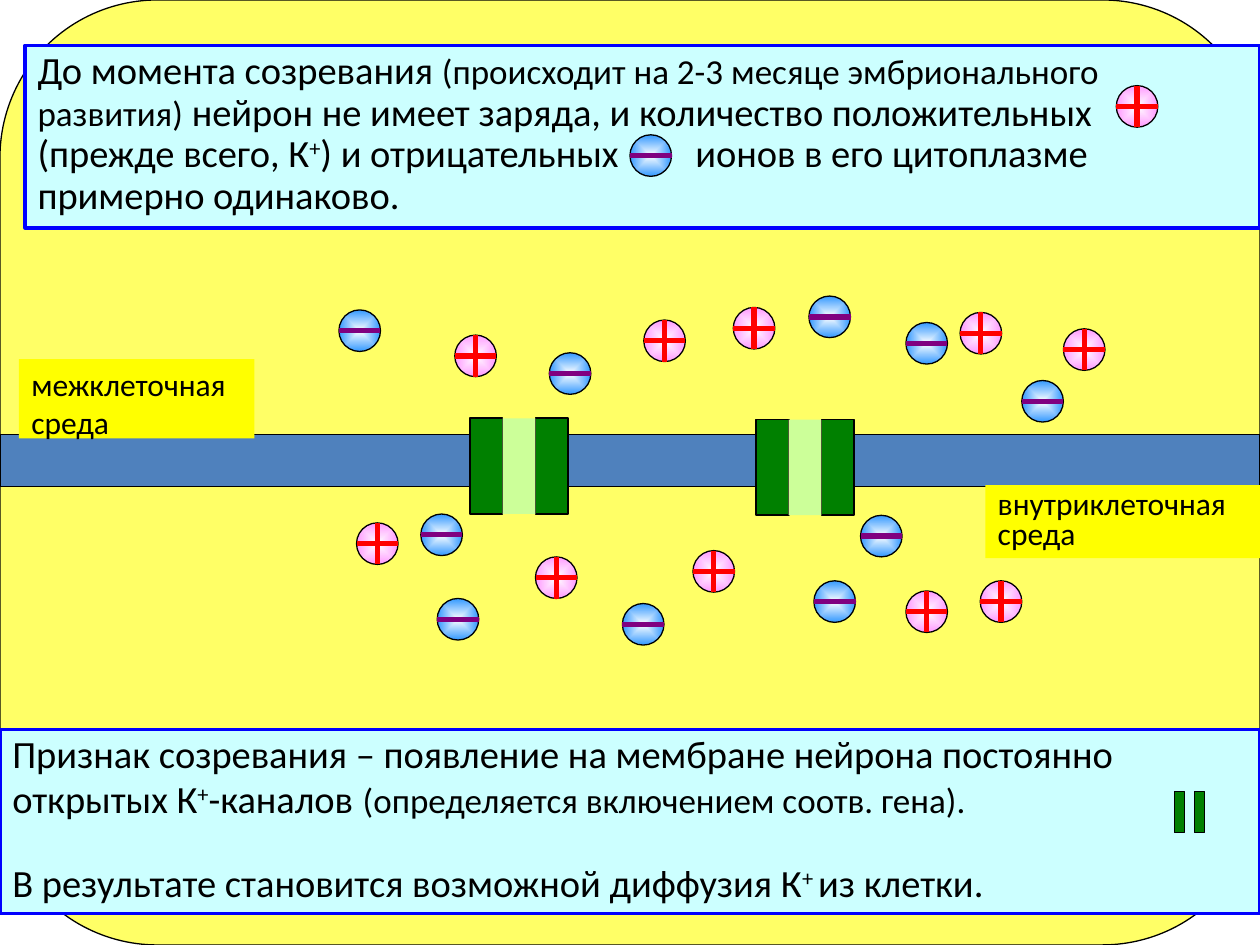
from lxml.etree import SubElement
from pptx import Presentation
from pptx.dml.color import RGBColor
from pptx.enum.shapes import MSO_CONNECTOR as Link, MSO_SHAPE as Preset
from pptx.oxml.ns import qn
from pptx.util import Inches, Pt

THEME = {
    "font": "Calibri",
    "ink": "000000", "cell": "FFFF66", "membrane": "4F81BD",
    "panel": "CCFFFF", "panel_edge": "0000FF", "label": "FFFF00",
    "wall": "008000", "pore": "CCFF99", "ion_center": "FFFFFF",
    "main": 22, "aside": 20, "gap": 24, "label_size": 18,
}
ION_STYLES = {
    "positive": {"rim": "FF99FF", "sign": "FF0000"},
    "negative": {"rim": "3399FF", "sign": "800080"},
}

MATURATION = [
    [("До момента созревания ", "main"),
     ("(происходит на 2-3 месяце эмбрионального развития)", "aside"),
     (" нейрон не имеет заряда, и количество положительных", "main"),
     ("\n", "break"),
     ("(прежде всего, К", "main"), ("+", "super"),
     (") и отрицательных\tионов в его цитоплазме примерно одинаково.", "main")],
]
CHANNELS_APPEAR = [
    [("Признак созревания – появление на мембране нейрона постоянно открытых К", "main"),
     ("+", "super"), ("-каналов", "main"), (" ", "gap"),
     ("(определяется включением соотв. гена).", "aside")],
    [("В результате становится возможной диффузия К", "main"),
     ("+ ", "super"), ("из клетки.", "main")],
]
OUTSIDE = [[("межклеточная", "label_size")], [("среда", "label_size")]]
INSIDE = [[("внутриклеточная", "label_size")], [("среда", "label_size")]]

ION_SIZE = 0.33
IONS = {
    "positive": [
        (3.61, 2.66), (5.11, 2.54), (5.82, 2.44), (7.62, 2.48), (8.44, 2.61),
        (2.83, 4.15), (4.25, 4.42), (5.5, 4.37), (7.19, 4.69), (7.78, 4.61),
    ],
    "negative": [
        (2.69, 2.46), (4.36, 2.8), (6.42, 2.35), (7.19, 2.56), (8.11, 3.02),
        (3.34, 4.08), (3.47, 4.75), (4.94, 4.79), (6.46, 4.61), (6.83, 4.09),
    ],
}
LEGEND_IONS = {"positive": (8.86, 0.68), "negative": (5, 1.07)}
CHANNELS = [(3.73, 3.32), (6, 3.33)]
CHANNEL_PITCH, CHANNEL_HEIGHT = 0.26, 0.76
LEGEND_WALLS = [(9.32, 6.28), (9.48, 6.28)]


def rgb(code):
    return RGBColor.from_string(code)


def set_edge(part, color, width):
    if color:
        part.line.color.rgb = rgb(color)
        part.line.width = Pt(width)
    else:
        part.line.fill.background()


def add_block(shapes, preset, box, color, edge=THEME["ink"], width=0.75):
    block = shapes.add_shape(preset, *map(Inches, box))
    block.shadow.inherit = False
    block.fill.solid()
    block.fill.fore_color.rgb = rgb(color)
    set_edge(block, edge, width)
    return block


def add_text(shapes, box, paragraphs, color, edge=None, spacing=0.9, before=0, tab=None):
    panel = shapes.add_textbox(*map(Inches, box))
    panel.fill.solid()
    panel.fill.fore_color.rgb = rgb(color)
    set_edge(panel, edge, 2)
    frame = panel.text_frame
    frame.word_wrap = True
    for index, pieces in enumerate(paragraphs):
        paragraph = frame.add_paragraph() if index else frame.paragraphs[0]
        paragraph.line_spacing = spacing
        if index and before:
            paragraph.space_before = Pt(before)
        if tab:
            stops = SubElement(paragraph._p.get_or_add_pPr(), qn("a:tabLst"))
            SubElement(stops, qn("a:tab"), pos=str(Inches(tab)), algn="l")
        for words, role in pieces:
            if role == "break":
                paragraph.add_line_break()
                continue
            run = paragraph.add_run()
            run.text = words
            run.font.name = THEME["font"]
            run.font.size = Pt(THEME["main" if role == "super" else role])
            run.font.color.rgb = rgb(THEME["ink"])
            if role == "super":
                run._r.get_or_add_rPr().set("baseline", "30000")


def add_stroke(shapes, start, end, color):
    stroke = shapes.add_connector(Link.STRAIGHT, *map(Inches, (*start, *end)))
    set_edge(stroke, color, 3)
    SubElement(stroke._element.spPr, qn("a:effectLst"))


def add_ion(slide, charge, left, top):
    style = ION_STYLES[charge]
    ion = slide.shapes.add_group_shape().shapes
    body = add_block(ion, Preset.OVAL, (left, top, ION_SIZE, ION_SIZE), style["rim"])
    body.fill.gradient()
    for stop, color in zip(body.fill.gradient_stops, (THEME["ion_center"], style["rim"])):
        stop.color.rgb = rgb(color)
    gradient = body._element.spPr.find(qn("a:gradFill"))
    gradient.remove(gradient.find(qn("a:lin")))
    radial = SubElement(gradient, qn("a:path"), path="shape")
    SubElement(radial, qn("a:fillToRect"), l="50000", t="50000", r="50000", b="50000")
    middle_x, middle_y = left + ION_SIZE / 2, top + ION_SIZE / 2
    add_stroke(ion, (left, middle_y), (left + ION_SIZE, middle_y), style["sign"])
    if charge == "positive":
        add_stroke(ion, (middle_x, top + ION_SIZE), (middle_x, top), style["sign"])


def add_channel(slide, left, top):
    channel = slide.shapes.add_group_shape().shapes
    for slot, color, edge in ((0, "wall", THEME["ink"]), (2, "wall", THEME["ink"]), (1, "pore", None)):
        box = (left + slot * CHANNEL_PITCH, top, CHANNEL_PITCH, CHANNEL_HEIGHT)
        add_block(channel, Preset.RECTANGLE, box, THEME[color], edge, 1)


def main():
    deck = Presentation()
    deck.slide_width, deck.slide_height = Inches(10), Inches(7.5)
    slide = deck.slides.add_slide(deck.slide_layouts[6])
    shapes = slide.shapes

    add_block(shapes, Preset.ROUNDED_RECTANGLE, (0, 0, 10, 7.5), THEME["cell"])
    add_block(shapes, Preset.RECTANGLE, (0, 3.45, 10, 0.41), THEME["membrane"])
    add_text(shapes, (0.2, 0.36, 9.8, 1.45), MATURATION,
             THEME["panel"], THEME["panel_edge"], tab=5.22)
    for charge, corner in LEGEND_IONS.items():
        add_ion(slide, charge, *corner)
    add_text(shapes, (7.82, 3.85, 2.18, 0.58), INSIDE, THEME["label"], spacing=0.8)
    for charge, corners in IONS.items():
        for corner in corners:
            add_ion(slide, charge, *corner)
    for corner in CHANNELS:
        add_channel(slide, *corner)
    add_text(shapes, (0, 5.79, 10, 1.46), CHANNELS_APPEAR,
             THEME["panel"], THEME["panel_edge"], before=24)
    for corner in LEGEND_WALLS:
        add_block(shapes, Preset.RECTANGLE, (*corner, 0.08, 0.33), THEME["wall"])
    add_text(shapes, (0.15, 2.85, 1.87, 0.63), OUTSIDE, THEME["label"], spacing=1.0)
    deck.save("out.pptx")


if __name__ == "__main__":
    main()
